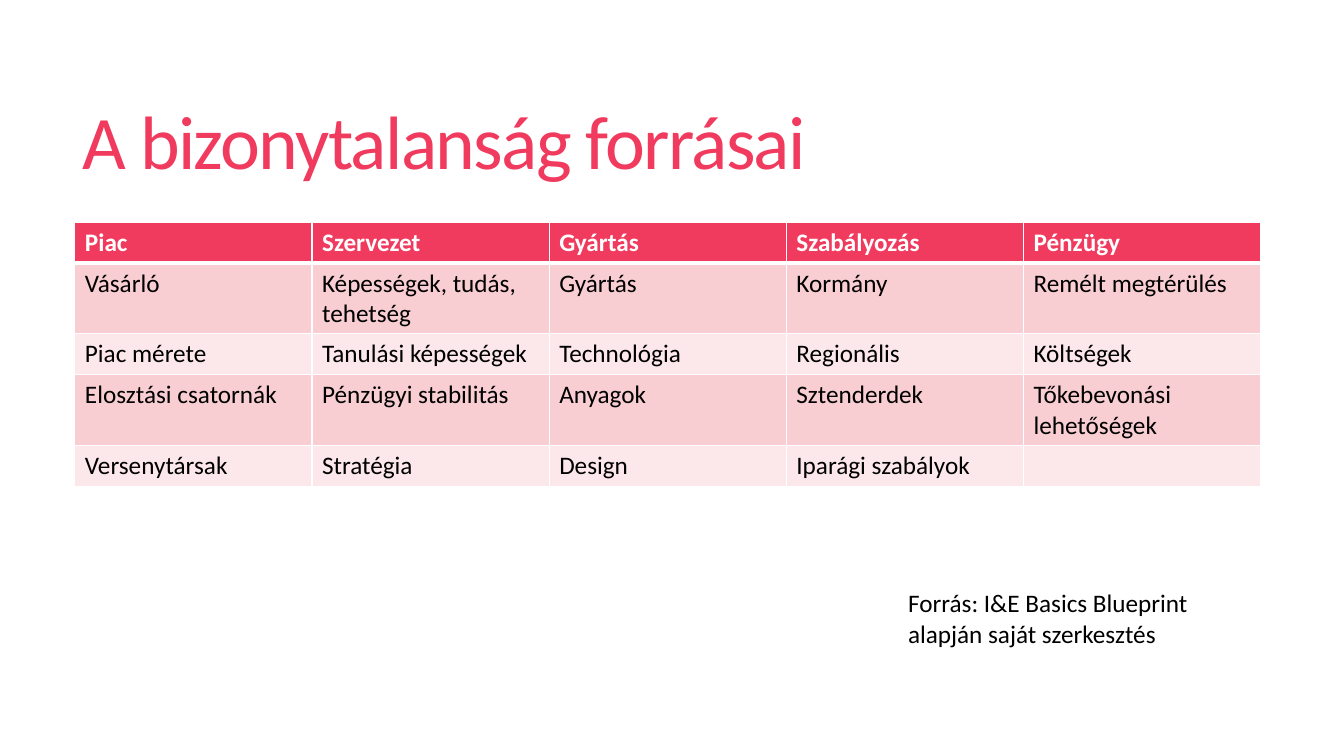
from lxml import etree
from pptx import Presentation
from pptx.dml.color import RGBColor
from pptx.enum import text
from pptx.oxml import ns
from pptx.util import Pt

RED = RGBColor(0xF0, 0x3B, 0x5E)
ROSE = RGBColor(0xF9, 0xCE, 0xD2)
BLUSH = RGBColor(0xFC, 0xE8, 0xEA)
WHITE = RGBColor(0xFF, 0xFF, 0xFF)
BLACK = RGBColor(0, 0, 0)

ROWS = [
    ["Piac", "Szervezet", "Gyártás", "Szabályozás", "Pénzügy"],
    ["Vásárló", "Képességek, tudás, tehetség", "Gyártás", "Kormány", "Remélt megtérülés"],
    ["Piac mérete", "Tanulási képességek", "Technológia", "Regionális", "Költségek"],
    ["Elosztási csatornák", "Pénzügyi stabilitás", "Anyagok", "Sztenderdek",
     "Tőkebevonási lehetőségek"],
    ["Versenytársak", "Stratégia", "Design", "Iparági szabályok", ""],
]


class Deck:
    font = "Calibri"
    body_size = 18

    def __init__(self, width, height):
        self.prs = Presentation()
        self.prs.slide_width, self.prs.slide_height = Pt(width), Pt(height)
        self.s = self.prs.slides.add_slide(self.prs.slide_layouts[6])

    def format(self, p, color, size=body_size, bold=False):
        for r in p.runs:
            r.font.name, r.font.size, r.font.bold = self.font, Pt(size), bold
            r.font.color.rgb = color

    def text(self, content, left, top, width, height, color, size=body_size):
        sp = self.s.shapes.add_textbox(Pt(left), Pt(top), Pt(width), Pt(height))
        tf = sp.text_frame
        tf.word_wrap = True
        tf.text = content
        self.format(tf.paragraphs[0], color, size)
        return tf

    def title(self, content, left, top, width, height):
        tf = self.text(content, left, top, width, height, RED, 54)
        tf.vertical_anchor = text.MSO_ANCHOR.MIDDLE
        p = tf.paragraphs[0]
        p.line_spacing = 0.85
        p.runs[0].font._element.set("spc", "-120")

    def border(self, cell, side, weight):
        """Draw a white border; side is L, R, T or B."""
        tc_pr = cell._tc.get_or_add_tcPr()
        ln = etree.SubElement(tc_pr, ns.qn("a:ln" + side), w=str(Pt(weight)))
        fill = etree.SubElement(ln, ns.qn("a:solidFill"))
        etree.SubElement(fill, ns.qn("a:srgbClr"), val=str(WHITE))

    def table(self, rows, left, top, col_width, row_height):
        n_cols = len(rows[0])
        frame = self.s.shapes.add_table(
            len(rows), n_cols, Pt(left), Pt(top),
            Pt(col_width * n_cols), Pt(row_height * len(rows)))
        for i, row in enumerate(rows):
            header = i == 0
            fill = RED if header else ROSE if i % 2 else BLUSH
            for j, content in enumerate(row):
                cell = frame.table.cell(i, j)
                cell.text = content
                self.format(cell.text_frame.paragraphs[0],
                            WHITE if header else BLACK, bold=header)
                weights = {"L": 1, "R": 1, "T": 3 if i == 1 else 1, "B": 3 if header else 1}
                for side, weight in weights.items():
                    self.border(cell, side, weight)
                cell.fill.solid()
                cell.fill.fore_color.rgb = fill


def main():
    deck = Deck(960, 540)
    deck.title("A bizonytalanság forrásai", 52, 39.6, 848, 130.3)
    deck.table(ROWS, 53.5, 158.8, 169.4, 29.2)
    deck.text("Forrás: I&E Basics Blueprint alapján saját szerkesztés",
              641.5, 416.2, 258.5, 51, BLACK)
    deck.prs.save("out.pptx")


if __name__ == "__main__":
    main()
